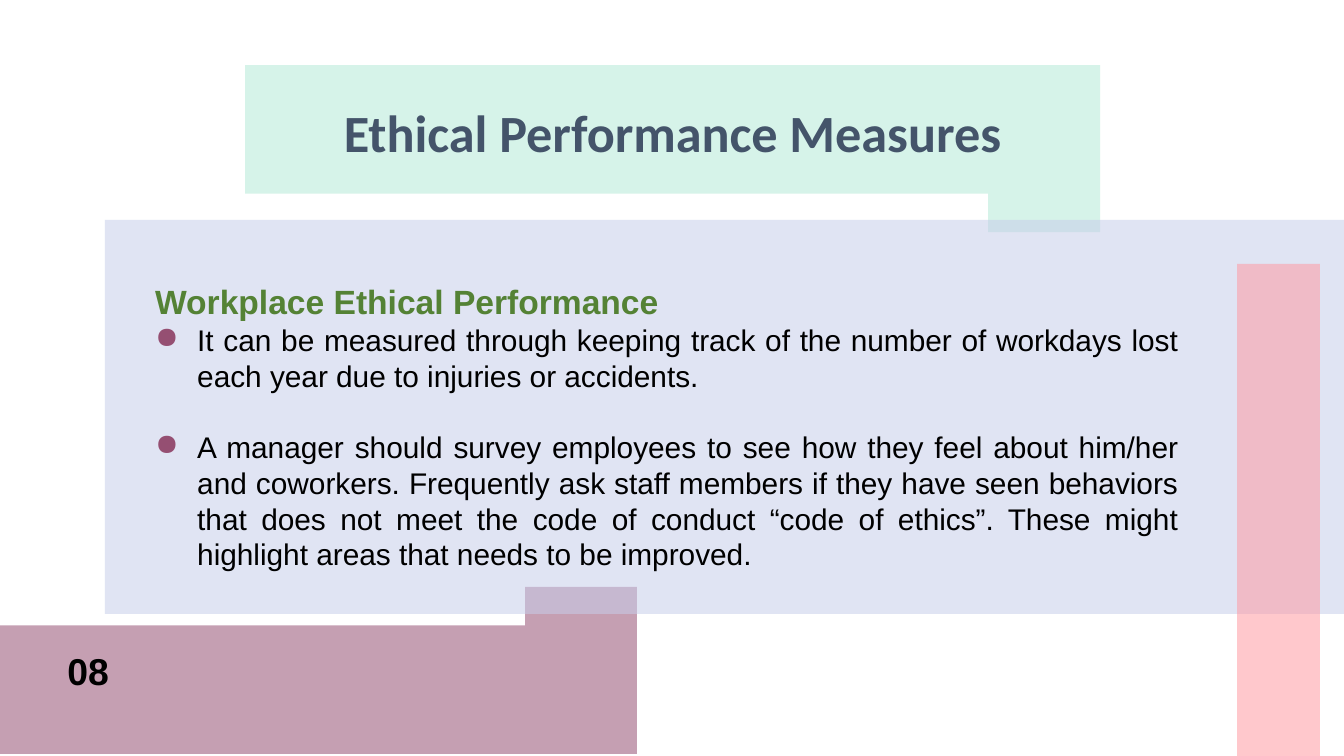
from dataclasses import dataclass

from lxml import etree
from pptx import Presentation
from pptx.dml.color import RGBColor
from pptx.enum.shapes import MSO_SHAPE
from pptx.enum.text import PP_ALIGN
from pptx.oxml.ns import qn
from pptx.util import Pt

RECT, CORNER = MSO_SHAPE.RECTANGLE, MSO_SHAPE.CORNER
LEFT, CENTER, JUSTIFY = PP_ALIGN.LEFT, PP_ALIGN.CENTER, PP_ALIGN.JUSTIFY
EMU_PER_PX = 914400 / 134.4


def px(n):
    """Turn pixels into EMU."""
    return round(n * EMU_PER_PX)


@dataclass(frozen=True)
class Theme:
    """Colours, fonts and type sizes of the slide."""
    plum: str = "954F72"
    mint: str = "B5EAD7"
    lavender: str = "C7CEEA"
    pink: str = "FF9AA2"
    slate: str = "44546A"
    green: str = "548235"
    black: str = "000000"
    title_font: str = "Calibri"
    body_font: str = "Arial"
    title: int = 28
    number: int = 20
    heading: int = 18
    body: int = 16
    alpha: int = 54


class Deck:
    """Holds the theme and the current slide."""

    def __init__(self, theme, width, height):
        """Start a presentation of the given size."""
        self.theme = theme
        self.prs = Presentation()
        self.prs.slide_width, self.prs.slide_height = px(width), px(height)

    def add_slide(self):
        """Add a blank slide and make it current."""
        self.s = self.prs.slides.add_slide(self.prs.slide_layouts[6])

    def block(self, kind, box, color, rotation=0, flip=False):
        """Draw a translucent block without outline."""
        sp = self.s.shapes.add_shape(kind, *map(px, box))
        sp.shadow.inherit = False
        sp.line.fill.background()
        sp.fill.solid()
        sp.fill.fore_color.rgb = RGBColor.from_string(color)
        clr = sp.fill._xPr.find(".//" + qn("a:srgbClr"))
        etree.SubElement(clr, qn("a:alpha"), val=str(self.theme.alpha * 1000))
        sp.rotation = rotation
        if flip:
            sp._element.spPr.find(qn("a:xfrm")).set("flipH", "1")
        if kind == CORNER:
            sp.adjustments[0], sp.adjustments[1] = 0.77, 0.67

    def text_box(self, box, pad_y=7):
        """Add an empty wrapping text box and return its frame."""
        tf = self.s.shapes.add_textbox(*map(px, box)).text_frame
        tf.word_wrap = True
        tf.margin_top = tf.margin_bottom = px(pad_y)
        return tf

    def paragraph(self, tf, text, size, color, font=None, bold=False,
                  align=LEFT, spacing=None, before=0, bullet=None):
        """Write one formatted paragraph into a frame."""
        p = tf.paragraphs[0] if not tf.text else tf.add_paragraph()
        p.alignment = align
        if spacing:
            p.line_spacing = spacing
        if before:
            p.space_before = Pt(before)
        if bullet:
            self.bullet(p, bullet)
        r = p.add_run()
        r.text = text
        r.font.name = font or self.theme.body_font
        r.font.size, r.font.bold = Pt(size), bold
        r.font.color.rgb = RGBColor.from_string(color)

    def bullet(self, p, color, indent=42):
        """Give a paragraph a coloured round bullet."""
        pPr = p._p.get_or_add_pPr()
        pPr.set("marL", str(px(indent)))
        pPr.set("indent", str(-px(indent)))
        clr = etree.SubElement(pPr, qn("a:buClr"))
        etree.SubElement(clr, qn("a:srgbClr"), val=color)
        etree.SubElement(pPr, qn("a:buChar"), char="●")


def main():
    """Build the ethical performance slide."""
    t = Theme()
    deck = Deck(t, 1344, 756)
    deck.add_slide()

    deck.block(CORNER, (0, 587, 637, 167), t.plum, flip=True)
    deck.block(CORNER, (245, 65, 855, 167), t.mint, rotation=180)
    title = deck.text_box((245, 87, 855, 85), pad_y=13)
    deck.paragraph(title, "Ethical Performance Measures", t.title, t.slate,
                   font=t.title_font, bold=True, align=CENTER)
    deck.block(RECT, (105, 220, 1239, 394), t.lavender)
    deck.block(RECT, (1032, 469, 493, 83), t.pink, rotation=90)

    number = deck.text_box((54, 641, 75, 59))
    deck.paragraph(number, "08", t.number, t.black, bold=True)

    body = deck.text_box((142, 254, 1050, 328))
    deck.paragraph(body, "Workplace Ethical Performance", t.heading, t.green,
                   bold=True, spacing=1.5)
    points = (
        ("It can be measured through keeping track of the number of workdays "
         "lost each year due to injuries or accidents.", 0),
        ("A manager should survey employees to see how they feel about "
         "him/her and coworkers. Frequently ask staff members if they have "
         "seen behaviors that does not meet the code of conduct “code of "
         "ethics”. These might highlight areas that needs to be improved.", 19),
    )
    for text, before in points:
        deck.paragraph(body, text, t.body, t.black, align=JUSTIFY,
                       before=before, bullet=t.plum)

    deck.prs.save("out.pptx")


if __name__ == "__main__":
    main()
